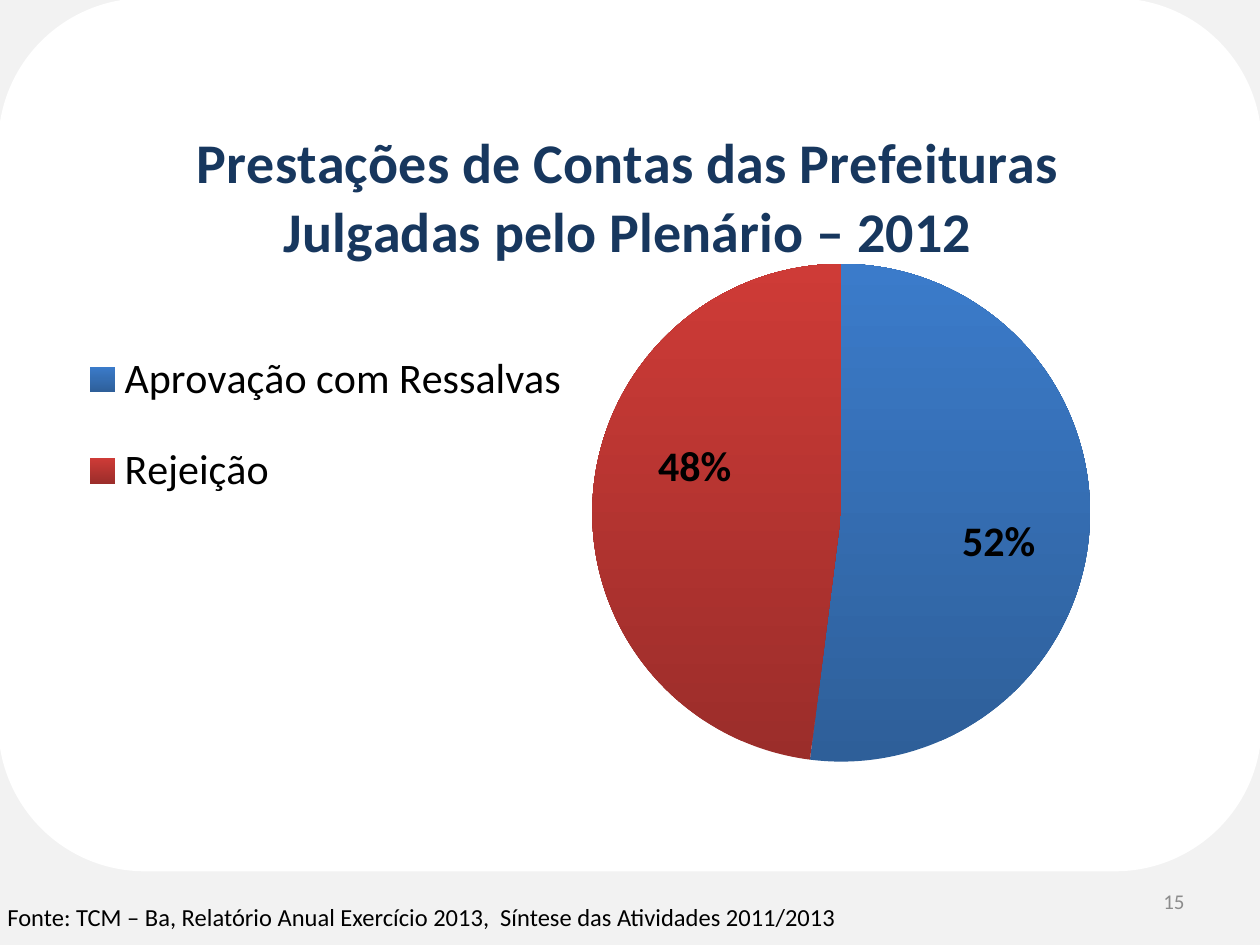
from lxml import etree
from pptx import Presentation
from pptx import util as u
from pptx.chart import data
from pptx.dml.color import RGBColor
from pptx.enum import chart as charts, shapes, text
from pptx.oxml import ns


def rgb(value):
    return RGBColor.from_string(value)


def place(parent, index, modes=(), **fractions):
    for old in parent.findall(ns.qn("c:layout")):
        parent.remove(old)
    layout = etree.Element(ns.qn("c:layout"))
    manual = etree.SubElement(layout, ns.qn("c:manualLayout"))
    for tag, value in (*modes, *fractions.items()):
        etree.SubElement(manual, ns.qn(f"c:{tag}")).set("val", str(value))
    parent.insert(index, layout)


class Deck:
    """Hold the style and current slide, and add each kind of element."""

    font = "Calibri"
    ink = "000000"
    edges = (("xMode", "edge"), ("yMode", "edge"))

    def __init__(self, slide):
        self.slide = slide

    def style(self, font, size, color=ink, bold=False):
        font.name, font.size, font.bold = self.font, u.Pt(size), bold
        font.color.rgb = rgb(color)

    def background(self, color):
        fill = self.slide.background.fill
        fill.solid()
        fill.fore_color.rgb = rgb(color)

    def panel(self, box, color):
        panel = self.slide.shapes.add_shape(
            shapes.MSO_SHAPE.ROUNDED_RECTANGLE, *map(u.Cm, box))
        panel.shadow.inherit = False
        panel.fill.solid()
        panel.fill.fore_color.rgb = rgb(color)
        panel.line.color.rgb = rgb(color)
        panel.line.width = u.Pt(2)

    def label(self, box, words, size, color=ink, align=text.PP_ALIGN.LEFT,
              anchor=text.MSO_ANCHOR.TOP):
        frame = self.slide.shapes.add_textbox(*map(u.Cm, box)).text_frame
        frame.word_wrap = True
        frame.vertical_anchor = anchor
        paragraph = frame.paragraphs[0]
        paragraph.text, paragraph.alignment = words, align
        self.style(paragraph.font, size, color)

    def pie(self, box, heading, heading_color, slices):
        accounts = data.CategoryChartData()
        accounts.categories = [part[0] for part in slices]
        accounts.add_series(heading, [part[1] for part in slices])
        chart = self.slide.shapes.add_chart(
            charts.XL_CHART_TYPE.PIE, *map(u.Cm, box), accounts).chart
        self.style(chart.font, 18)

        chart.has_title = True
        title = chart.chart_title
        paragraph = title.text_frame.paragraphs[0]
        paragraph.text = heading
        self.style(paragraph.font, 32, heading_color, bold=True)
        place(title._element, 1, self.edges, x=0.11, y=0.05)

        chart.has_legend = True
        legend = chart.legend
        legend.position = charts.XL_LEGEND_POSITION.TOP
        legend.include_in_layout = False
        self.style(legend.font, 24)
        place(legend._element, 1, self.edges, x=0.01, y=0.32, w=0.45, h=0.3)

        plot = chart.plots[0]
        plot.vary_by_categories = True
        place(plot._element.getparent(), 0,
              (("layoutTarget", "inner"), *self.edges),
              x=0.475, y=0.245, w=0.448, h=0.685)

        series = plot.series[0]
        for index, (_, _, colors, (dx, dy)) in enumerate(slices):
            point = series.points[index]
            fill = point.format.fill
            fill.gradient()
            fill.gradient_angle = 90
            for stop, color in zip(fill.gradient_stops, colors):
                stop.color.rgb = rgb(color)
            point.format.line.fill.background()
            share = point.data_label
            self.style(share.font, 24, bold=True)
            share.position = charts.XL_LABEL_POSITION.CENTER
            element = share._get_or_add_dLbl()
            element.find(ns.qn("c:showVal")).set("val", "0")
            element.find(ns.qn("c:showPercent")).set("val", "1")
            place(element, 1, x=dx, y=dy)


def main():
    deck = Presentation()
    deck.slide_width, deck.slide_height = u.Cm(25.4), u.Cm(19.05)
    page = Deck(deck.slides.add_slide(deck.slide_layouts[6]))
    page.background("F2F2F2")
    page.label((-0.1, 18.06, 18.4, 0.86),
               "Fonte: TCM – Ba, Relatório Anual Exercício 2013,  "
               "Síntese das Atividades 2011/2013", 14)
    page.panel((0, 0, 25.4, 17.53), "FFFFFF")
    page.pie((1.3, 1.52, 22.4, 15.01),
             "Prestações de Contas das Prefeituras Julgadas pelo Plenário – 2012",
             "17375E",
             [("Aprovação com Ressalvas", 52, ("2E5F99", "3B7BCA"), (0.03, 0.03)),
              ("Rejeição", 48, ("9B2D2A", "CE3B37"), (-0.02, -0.05))])
    page.label((18.2, 17.66, 5.93, 1.01), "15", 12, "8C8C8C",
               text.PP_ALIGN.RIGHT, text.MSO_ANCHOR.MIDDLE)
    deck.save("out.pptx")


if __name__ == "__main__":
    main()
